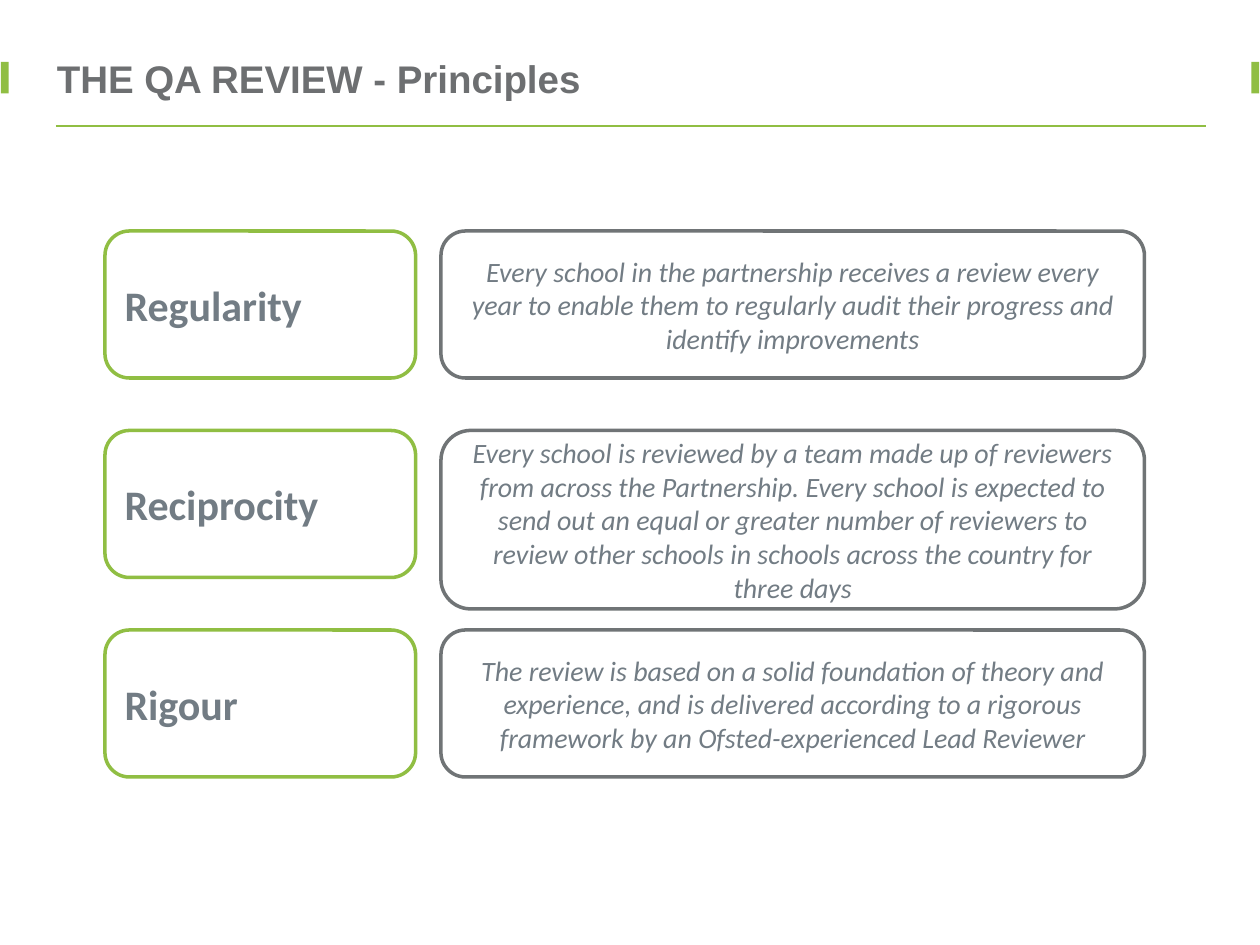
from pptx import Presentation
from pptx.dml.color import RGBColor
from pptx.enum.shapes import MSO_CONNECTOR as CONN, MSO_SHAPE as SHAPE
from pptx.enum.text import MSO_ANCHOR as ANCHOR, PP_ALIGN as ALIGN
from pptx.oxml.ns import qn
from pptx.util import Pt
from lxml.etree import SubElement

GREEN, GREY, TEXT = "90BE43", "707476", "727C84"


def rgb(value):
    return RGBColor.from_string(value)


def add_card(left, top, width, height, color, text, size, align):
    sp = s.shapes.add_shape(SHAPE.ROUNDED_RECTANGLE, Pt(left), Pt(top), Pt(width), Pt(height))
    sp.shadow.inherit = False
    sp.fill.solid()
    sp.fill.fore_color.rgb = rgb("FFFFFF")
    sp.line.color.rgb = rgb(color)
    sp.line.width = Pt(2)
    tf = sp.text_frame
    tf.word_wrap = True
    tf.vertical_anchor = ANCHOR.MIDDLE
    p = tf.paragraphs[0]
    p.text = text
    p.alignment = align
    p.font.name = "Calibri"
    p.font.size = Pt(size)
    p.font.color.rgb = rgb(TEXT)
    return p


prs = Presentation()
prs.slide_width, prs.slide_height = Pt(720), Pt(540)
s = prs.slides.add_slide(prs.slide_layouts[6])

rule = s.shapes.add_connector(CONN.STRAIGHT, Pt(32), Pt(72), Pt(689), Pt(72))
rule.line.color.rgb = rgb(GREEN)
rule.line.width = Pt(1)
SubElement(rule._element.spPr, qn("a:effectLst"))

for left in (0.5, 715):
    sp = s.shapes.add_shape(SHAPE.RECTANGLE, Pt(left), Pt(35.4), Pt(4.5), Pt(18))
    sp.shadow.inherit = False
    sp.fill.solid()
    sp.fill.fore_color.rgb = rgb(GREEN)
    sp.line.fill.background()

title = s.shapes.add_textbox(Pt(32.5), Pt(30), Pt(670), Pt(29.5))
tf = title.text_frame
tf.word_wrap = True
tf.vertical_anchor = ANCHOR.MIDDLE
tf.margin_left = tf.margin_right = tf.margin_top = tf.margin_bottom = 0
p = tf.paragraphs[0]
p.text = "THE QA REVIEW - Principles"
p.font.name = "Arial"
p.font.size = Pt(22)
p.font.bold = True
p.font.color.rgb = rgb("6D6F71")

principles = [
    ("Regularity", 84, "Every school in the partnership receives a review every year to enable them "
     "to regularly audit their progress and identify improvements"),
    ("Reciprocity", 102, "Every school is reviewed by a team made up of reviewers from across the "
     "Partnership. Every school is expected to send out an equal or greater number of reviewers "
     "to review other schools in schools across the country for three days"),
    ("Rigour", 84, "The review is based on a solid foundation of theory and experience, and is "
     "delivered according to a rigorous framework by an Ofsted-experienced Lead Reviewer"),
]
for i, (name, height, description) in enumerate(principles):
    top = 132 + 114 * i
    p = add_card(252, top, 402, height, GREY, description, 16, ALIGN.CENTER)
    p.font.italic = True
    p = add_card(60, top, 177.5, 84, GREEN, name, 24, ALIGN.LEFT)
    p.font.bold = True

prs.save("out.pptx")
